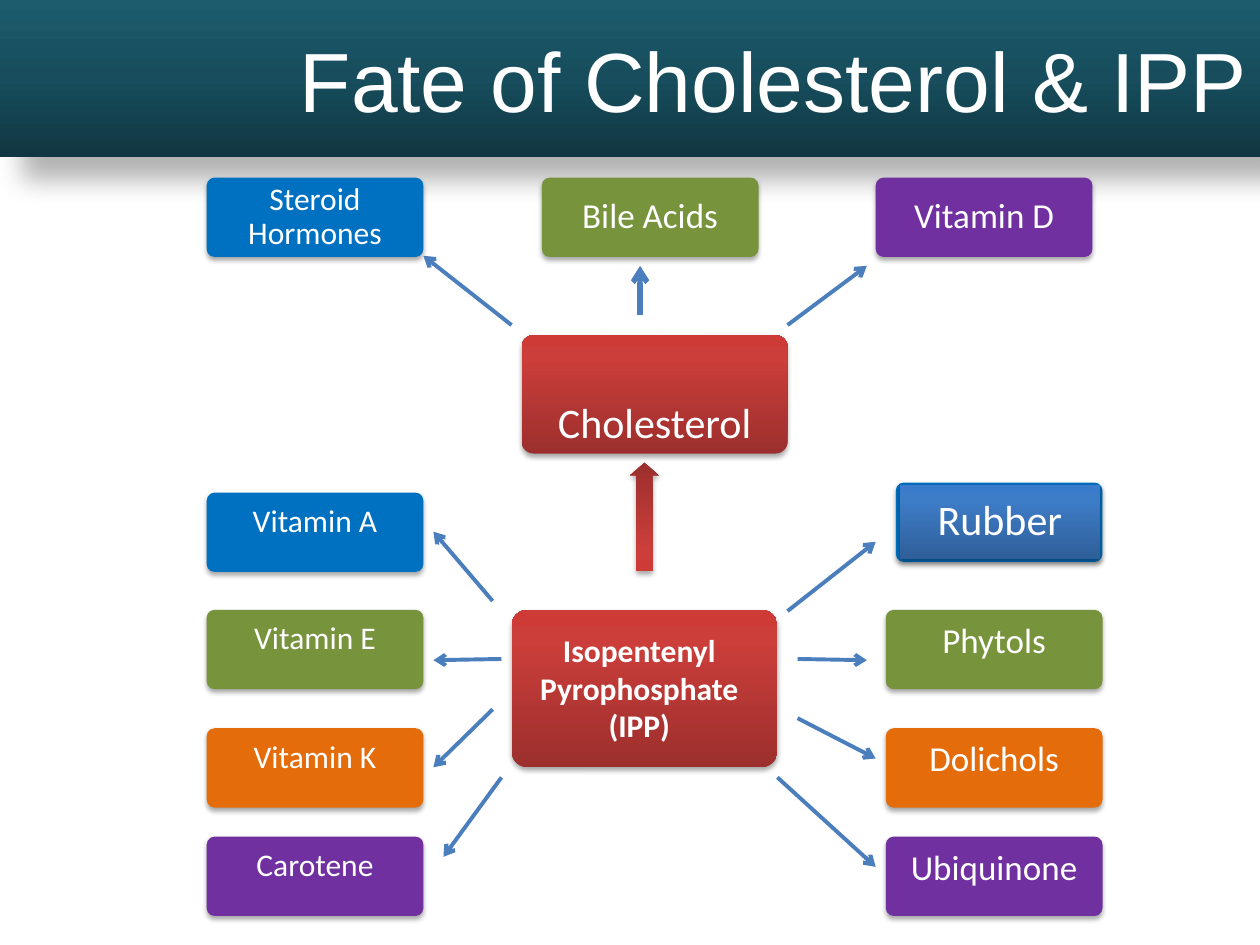
from lxml import etree
from pptx import Presentation
from pptx.dml.color import RGBColor
from pptx.enum.shapes import MSO_CONNECTOR, MSO_SHAPE
from pptx.enum.text import MSO_ANCHOR, PP_ALIGN
from pptx.oxml import parse_xml
from pptx.oxml.ns import nsdecls, qn
from pptx.util import Inches, Pt

BLUE, GREEN, ORANGE, PURPLE = "0070C0", "77933C", "E46C0A", "7030A0"
RED_STOPS = [(0, "9C2F2D"), (80, "CB3E3A"), (100, "CE3B37")]
BLUE_STOPS = [(0, "2F5F99"), (80, "3D7CC7"), (100, "3A7CCB")]
TEAL_STOPS = [(0, "103641"), (50, "174D5C"), (100, "1C5C6D")]
SOFT_SHADOW = (35, 3.1, 1.8, 90)


def add_block(kind, left, top, width, height, fill, angle=270, shadow=SOFT_SHADOW):
    """fill is a hex colour or gradient stops; shadow is opacity %, blur pt, distance pt, degrees."""
    block = slide.shapes.add_shape(kind, Inches(left), Inches(top), Inches(width), Inches(height))
    if kind == MSO_SHAPE.ROUNDED_RECTANGLE:
        block.adjustments[0] = 0.1
    block.line.fill.background()
    if isinstance(fill, str):
        block.fill.solid()
        block.fill.fore_color.rgb = RGBColor.from_string(fill)
    else:
        stops = "".join(f'<a:gs pos="{pos * 1000}"><a:srgbClr val="{color}"/></a:gs>'
                        for pos, color in fill)
        block.line._get_or_add_ln().addprevious(parse_xml(
            f'<a:gradFill {nsdecls("a")} rotWithShape="1"><a:gsLst>{stops}</a:gsLst>'
            f'<a:lin ang="{angle * 60000}" scaled="0"/></a:gradFill>'))
    opacity, blur, distance, direction = shadow
    block._element.spPr.append(parse_xml(
        f'<a:effectLst {nsdecls("a")}><a:outerShdw blurRad="{Pt(blur)}" dist="{Pt(distance)}" '
        f'dir="{direction * 60000}" algn="tl" rotWithShape="0"><a:srgbClr val="000000">'
        f'<a:alpha val="{opacity * 1000}"/></a:srgbClr></a:outerShdw></a:effectLst>'))
    return block


def write(block, text, size, font="Calibri", align=PP_ALIGN.CENTER, anchor=MSO_ANCHOR.TOP):
    frame = block.text_frame
    frame.text = text
    frame.word_wrap = True
    frame.vertical_anchor = anchor
    paragraph = frame.paragraphs[0]
    paragraph.alignment = align
    run_font = paragraph.runs[0].font
    run_font.name, run_font.size = font, Pt(size)
    run_font.color.rgb = RGBColor.from_string("FFFFFF")
    return frame


prs = Presentation()
prs.slide_width, prs.slide_height = Inches(10), Inches(7.5)
slide = prs.slides.add_slide(prs.slide_layouts[6])

title = add_block(MSO_SHAPE.RECTANGLE, 0, 0, 10, 1.25, TEAL_STOPS, shadow=(30, 15, 18, 45))
write(title, "Fate of Cholesterol & IPP", 48, "Arial", PP_ALIGN.RIGHT, MSO_ANCHOR.MIDDLE)

# Sources in the middle column
cholesterol = add_block(MSO_SHAPE.ROUNDED_RECTANGLE, 4.14, 2.66, 2.11, 0.94, RED_STOPS)
write(cholesterol, "Cholesterol", 24).margin_top = Inches(0.46)

ipp = add_block(MSO_SHAPE.ROUNDED_RECTANGLE, 4.06, 4.84, 2.11, 1.25, RED_STOPS)
ipp_frame = write(ipp, "Isopentenyl Pyrophosphate (IPP)", 18)
ipp_frame.margin_top, ipp_frame.margin_right = Inches(0.13), Inches(0.18)
ipp_frame.paragraphs[0].runs[0].font.bold = True

ipp_to_cholesterol = add_block(MSO_SHAPE.UP_ARROW, 5, 3.67, 0.23, 0.86, RED_STOPS, angle=90)
ipp_to_cholesterol.adjustments[0] = 0.55
ipp_to_cholesterol.adjustments[1] = 0.45

# Products of cholesterol
for left, name, size, color in [(1.64, "Steroid Hormones", 18, BLUE),
                                (4.3, "Bile Acids", 20, GREEN),
                                (6.95, "Vitamin D", 20, PURPLE)]:
    product = add_block(MSO_SHAPE.ROUNDED_RECTANGLE, left, 1.41, 1.72, 0.63, color)
    frame = write(product, name, size, anchor=MSO_ANCHOR.MIDDLE)
    frame.margin_left = frame.margin_right = Inches(0.18)
    frame.paragraphs[0].line_spacing = 0.9

# Products of IPP
rows = [(3.91, "Vitamin A", None, BLUE), (4.84, "Vitamin E", "Phytols", GREEN),
        (5.78, "Vitamin K", "Dolichols", ORANGE), (6.64, "Carotene", "Ubiquinone", PURPLE)]
for top, left_name, right_name, color in rows:
    for left, name, size in [(1.64, left_name, 18), (7.03, right_name, 20)]:
        if name:
            product = add_block(MSO_SHAPE.ROUNDED_RECTANGLE, left, top, 1.72, 0.63, color)
            write(product, name, size)

add_block(MSO_SHAPE.ROUNDED_RECTANGLE, 7.11, 3.83, 1.64, 0.63, BLUE)
rubber = add_block(MSO_SHAPE.RECTANGLE, 7.14, 3.85, 1.59, 0.59, BLUE_STOPS)
write(rubber, "Rubber", 24, anchor=MSO_ANCHOR.MIDDLE).paragraphs[0].line_spacing = 0.9

# Arrows: start x, start y, end x, end y, width
arrows = [
    (4.06, 2.58, 3.36, 2.03, 2.25),
    (5.08, 2.5, 5.08, 2.11, 3),
    (6.25, 2.58, 6.88, 2.11, 2.25),
    (3.91, 4.77, 3.44, 4.22, 2.25),
    (3.98, 5.23, 3.44, 5.24, 2.25),
    (3.91, 5.63, 3.44, 6.09, 2.25),
    (3.98, 6.17, 3.52, 6.8, 2.25),
    (6.25, 4.85, 6.95, 4.3, 2.25),
    (6.33, 5.23, 6.88, 5.24, 2.25),
    (6.33, 5.7, 6.95, 6.02, 2.25),
    (6.17, 6.17, 6.95, 6.88, 2.25),
]
for *ends, width in arrows:
    arrow = slide.shapes.add_connector(MSO_CONNECTOR.STRAIGHT, *map(Inches, ends))
    arrow.line.color.rgb = RGBColor.from_string("4B7EBC")
    arrow.line.width = Pt(width)
    etree.SubElement(arrow.line._get_or_add_ln(), qn("a:tailEnd"), type="arrow")
    etree.SubElement(arrow._element.spPr, qn("a:effectLst"))

prs.save("out.pptx")
